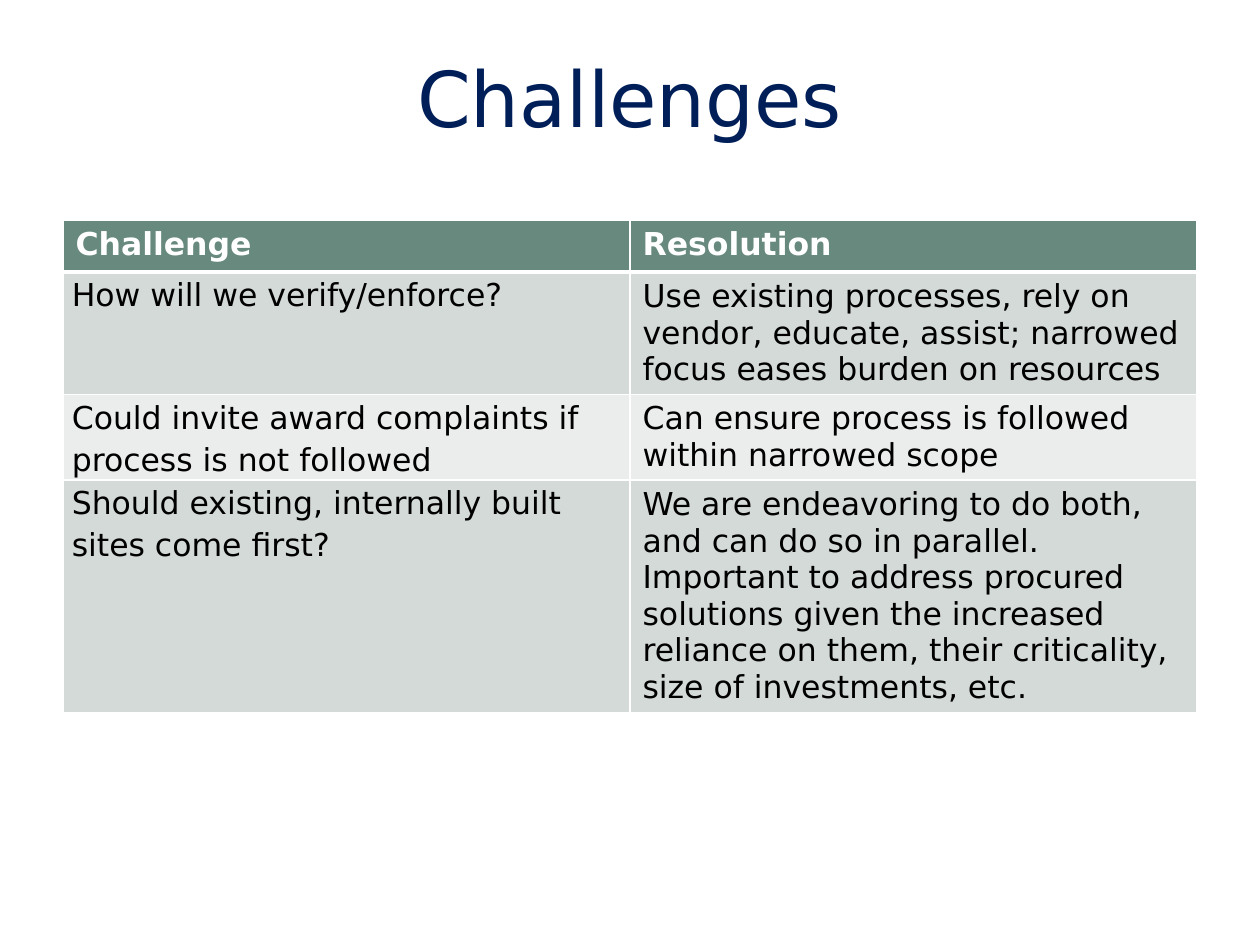
"""Build the Challenges slide: a title above a two-column table."""
import lxml.etree
import pptx
import pptx.dml.color
import pptx.enum.text
import pptx.oxml
import pptx.oxml.ns
import pptx.util

Inches, Pt = pptx.util.Inches, pptx.util.Pt
RGB = pptx.dml.color.RGBColor.from_string
qn = pptx.oxml.ns.qn

TITLE = "Challenges"
HEADER = ("Challenge", "Resolution")
ROWS = [
    ("How will we verify/enforce?",
     "Use existing processes, rely on vendor, educate, assist; narrowed focus eases burden on resources"),
    ("Could invite award complaints if process is not followed",
     "Can ensure process is followed within narrowed scope"),
    ("Should existing, internally built sites come first?",
     "We are endeavoring to do both, and can do so in parallel. Important to address procured "
     "solutions given the increased reliance on them, their criticality, size of investments, etc."),
]
THEME = {
    "font": "DejaVu Sans", "title_size": 44, "body_size": 18,
    "title_stops": ((0, "00163E"), (50, "001F59"), (100, "002569")),
    "header_fill": "688A7E", "bands": ("D4DAD8", "EBEDEC"),
    "header_text": "FFFFFF", "body_text": "000000", "border": "FFFFFF",
}
LEFT, WIDTH, ROW_HEIGHT = 0.5, 9, 0.41


def add_run(p, text, size):
    """Add a run in the theme font and return it."""
    r = p.add_run()
    r.text = text
    r.font.size = Pt(size)
    r.font.name = THEME["font"]
    return r


def fill_gradient(r, stops, angle):
    """Give a run a linear gradient with any number of stops."""
    r.font.fill.gradient()
    grad = r.font._element.find(qn("a:gradFill"))
    grad_list = grad.find(qn("a:gsLst"))
    for stop in list(grad_list):
        grad_list.remove(stop)
    for pos, color in stops:
        gs = lxml.etree.SubElement(grad_list, qn("a:gs"), pos=str(pos * 1000))
        lxml.etree.SubElement(gs, qn("a:srgbClr"), val=color)
    grad.find(qn("a:lin")).set("ang", str(angle * 60000))


def set_borders(cell, widths):
    """Draw the cell's sides with widths in points, keyed by side letter."""
    props = cell._tc.get_or_add_tcPr()
    for i, (side, width) in enumerate(widths.items()):
        line = pptx.oxml.parse_xml(
            f'<a:ln{side} {pptx.oxml.ns.nsdecls("a")} w="{Pt(width)}"><a:solidFill>'
            f'<a:srgbClr val="{THEME["border"]}"/></a:solidFill></a:ln{side}>')
        props.insert(i, line)


def add_title(slide):
    """Place and format the title."""
    sp = slide.shapes.title
    sp.left, sp.top, sp.width, sp.height = map(Inches, (LEFT, 0.3, WIDTH, 1.25))
    tf = sp.text_frame
    tf.vertical_anchor = pptx.enum.text.MSO_ANCHOR.TOP
    tf.margin_top = Inches(0.1)
    p = tf.paragraphs[0]
    p.alignment = pptx.enum.text.PP_ALIGN.CENTER
    r = add_run(p, TITLE, THEME["title_size"])
    fill_gradient(r, THEME["title_stops"], 270)


def format_cell(cell, text, row, col):
    """Write and style one table cell."""
    header = row == 0
    fill = THEME["header_fill"] if header else THEME["bands"][(row - 1) % 2]
    cell.fill.solid()
    cell.fill.fore_color.rgb = RGB(fill)
    p = cell.text_frame.paragraphs[0]
    if not header and col == 0:
        cell.margin_left = cell.margin_right = Inches(0.07)
        cell.margin_top = cell.margin_bottom = 0
        p.line_spacing = 1.15
    r = add_run(p, text, THEME["body_size"])
    r.font.bold = header
    r.font.color.rgb = RGB(THEME["header_text" if header else "body_text"])
    top = 3 if row == 1 else 1
    set_borders(cell, {"L": 1, "R": 1, "T": top, "B": 3 if header else 1})


def add_challenges(slide):
    """Add the table of challenges and resolutions."""
    rows = [HEADER] + ROWS
    frame = slide.shapes.add_table(len(rows), len(HEADER), Inches(LEFT), Inches(1.75),
                                   Inches(WIDTH), Inches(ROW_HEIGHT * len(rows)))
    for i, texts in enumerate(rows):
        for j, text in enumerate(texts):
            format_cell(frame.table.cell(i, j), text, i, j)
    frame.height = Inches(4.01)


def main():
    """Create and save the presentation."""
    prs = pptx.Presentation()
    prs.slide_width, prs.slide_height = Inches(10), Inches(7.5)
    slide = prs.slides.add_slide(prs.slide_layouts[5])
    add_title(slide)
    add_challenges(slide)
    prs.save("out.pptx")


if __name__ == "__main__":
    main()
